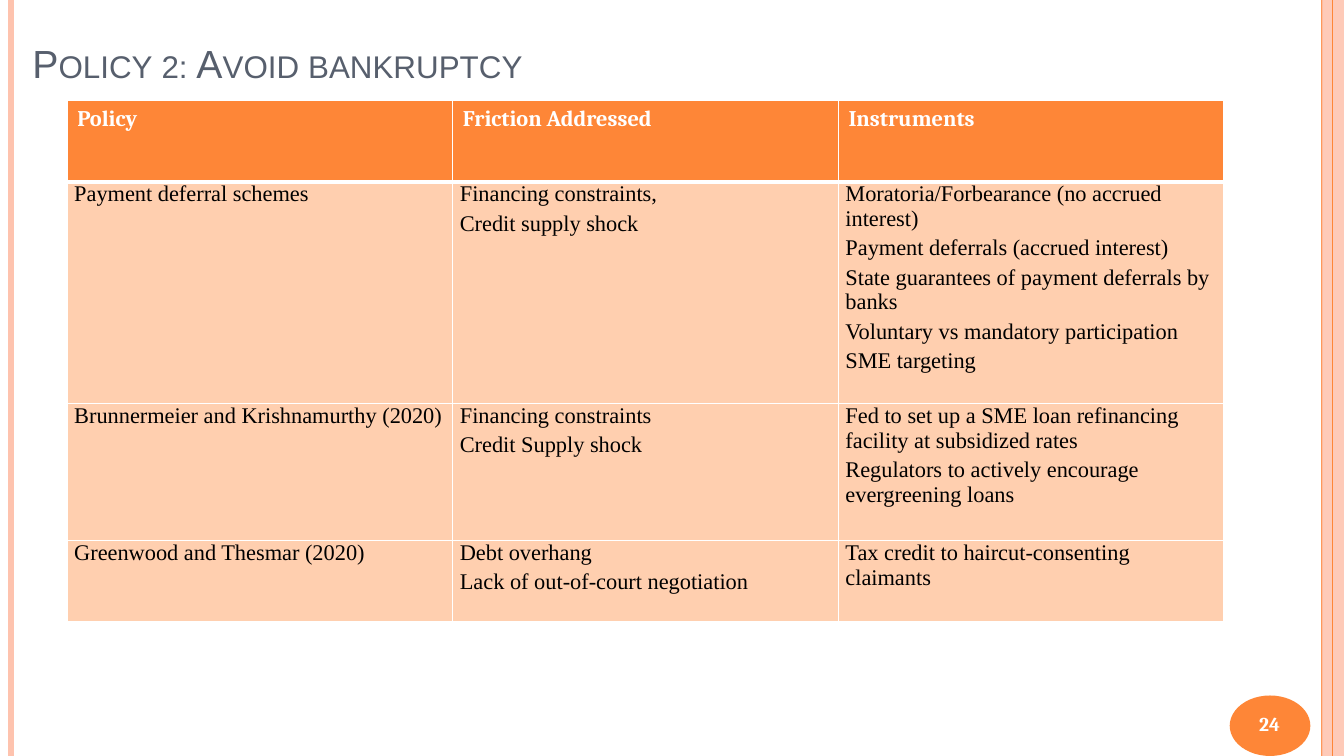
from dataclasses import dataclass
from lxml.etree import SubElement as Sub
from pptx import Presentation
from pptx.dml.color import RGBColor as Rgb
from pptx.enum.shapes import MSO_CONNECTOR as Conn, MSO_SHAPE as Kind
from pptx.enum.text import MSO_ANCHOR as Anchor, PP_ALIGN as Align
from pptx.oxml.ns import qn
from pptx.util import Inches, Pt


@dataclass(frozen=True)
class Theme:
    """Hold the colours, fonts and type sizes of the slide."""
    main: str = "FE8637"
    soft: str = "FEC3AE"
    pale: str = "FFCFAF"
    slate: str = "575F6D"
    white: str = "FFFFFF"
    black: str = "000000"
    sans: str = "Arial"
    head: str = "Cambria"
    body: str = "Times New Roman"
    big: int = 28
    mid: int = 16
    small: int = 14


LOOK = Theme()
COLS, ROWS = 120, 67.5
WIDE, HIGH = Inches(13.333), Inches(7.5)
TABLE = [
    [["Policy"], ["Friction Addressed"], ["Instruments"]],
    [["Payment deferral schemes"],
     ["Financing constraints,", "Credit supply shock"],
     ["Moratoria/Forbearance (no accrued interest)",
      "Payment deferrals (accrued interest)",
      "State guarantees of payment deferrals by banks",
      "Voluntary vs mandatory participation",
      "SME targeting"]],
    [["Brunnermeier and Krishnamurthy (2020)"],
     ["Financing constraints", "Credit Supply shock"],
     ["Fed to set up a SME loan refinancing facility at subsidized rates",
      "Regulators to actively encourage evergreening loans"]],
    [["Greenwood and Thesmar (2020)"],
     ["Debt overhang", "Lack of out-of-court negotiation"],
     ["Tax credit to haircut-consenting claimants"]],
]


def across(n):
    """Turn grid columns into a length."""
    return round(WIDE * n / COLS)


def down(n):
    """Turn grid rows into a length."""
    return round(HIGH * n / ROWS)


def area(x, y, w, h):
    """Turn a grid box into left, top, width and height."""
    return across(x), down(y), across(w), down(h)


def write(frame, lines, font, size, color, bold=False, align=Align.LEFT,
          after=0, caps=False):
    """Fill a text frame with one formatted paragraph per line."""
    for i, line in enumerate(lines):
        para = frame.paragraphs[0] if i == 0 else frame.add_paragraph()
        para.alignment, para.space_after = align, Pt(after)
        run = para.add_run()
        run.text = line
        run.font.name, run.font.size, run.font.bold = font, Pt(size), bold
        run.font.color.rgb = Rgb.from_string(color)
        if caps:
            run.font._element.set("cap", "small")


def rule(slide, x, color, width):
    """Draw a line from the top to the foot of the slide."""
    line = slide.shapes.add_connector(
        Conn.STRAIGHT, across(x), 0, across(x), HIGH)
    line.line.color.rgb, line.line.width = Rgb.from_string(color), Pt(width)
    Sub(line._element.spPr, qn("a:effectLst"))


def block(slide, kind, box, color, alpha=100):
    """Draw a filled shape without an outline."""
    shape = slide.shapes.add_shape(kind, *area(*box))
    shape.shadow.inherit = False
    shape.fill.solid()
    shape.fill.fore_color.rgb = Rgb.from_string(color)
    shape.line.fill.background()
    if alpha < 100:
        tint = shape._element.spPr.find(".//" + qn("a:srgbClr"))
        Sub(tint, qn("a:alpha"), val=str(alpha * 1000))


def edge(cell, top, foot):
    """Give a cell white borders with the given top and foot widths."""
    props = cell._tc.get_or_add_tcPr()
    sides = {"lnL": 1, "lnR": 1, "lnT": top, "lnB": foot}
    for i, (side, width) in enumerate(sides.items()):
        line = Sub(props, qn("a:" + side), w=str(Pt(width)))
        Sub(Sub(line, qn("a:solidFill")), qn("a:srgbClr"), val=LOOK.white)
        props.insert(i, line)


def fill_cell(cell, lines, row):
    """Style a header or body cell and write its lines."""
    cell.fill.solid()
    cell.fill.fore_color.rgb = Rgb.from_string(
        LOOK.pale if row else LOOK.main)
    if row:
        cell.margin_left = cell.margin_right = Inches(0.07)
        cell.margin_top = cell.margin_bottom = 0
        write(cell.text_frame, lines, LOOK.body, LOOK.mid, LOOK.black,
              after=3)
    else:
        write(cell.text_frame, lines, LOOK.head, LOOK.mid, LOOK.white,
              bold=True)
    edge(cell, 3 if row == 1 else 1, 1 if row else 3)


def grid(slide, data, box, highs):
    """Add the policy table with equal columns."""
    table = slide.shapes.add_table(
        len(data), len(data[0]), *area(*box)).table
    for row, high in zip(table.rows, highs):
        row.height = down(high)
    for i, cells in enumerate(data):
        for j, lines in enumerate(cells):
            fill_cell(table.cell(i, j), lines, i)


def title(slide, text, box):
    """Place and format the title placeholder."""
    head = slide.shapes.title
    head.left, head.top, head.width, head.height = area(*box)
    head.text_frame.vertical_anchor = Anchor.BOTTOM
    write(head.text_frame, [text], LOOK.sans, LOOK.big, LOOK.slate,
          caps=True)


def number(slide, text, box):
    """Write the page number in its badge."""
    frame = slide.shapes.add_textbox(*area(*box)).text_frame
    frame.word_wrap, frame.vertical_anchor = True, Anchor.MIDDLE
    write(frame, [text], LOOK.head, LOOK.small, LOOK.white, bold=True,
          align=Align.CENTER)


def main():
    """Build the slide and save it."""
    deck = Presentation()
    deck.slide_width, deck.slide_height = WIDE, HIGH
    slide = deck.slides.add_slide(deck.slide_layouts[5])
    rule(slide, 1, LOOK.soft, 4.5)
    rule(slide, 118, LOOK.main, 1.5)
    block(slide, Kind.RECTANGLE, (118, 0, 2, ROWS), LOOK.soft, alpha=87)
    rule(slide, 119, LOOK.main, 0.75)
    block(slide, Kind.OVAL, (109.8, 62.1, 7.2, 5.4), LOOK.main)
    title(slide, "Policy 2: Avoid bankruptcy", (2, 1.2, 114, 7))
    number(slide, "24", (109.35, 62, 8, 5.15))
    grid(slide, TABLE, (6, 9, 103.3, 46.5), (7.25, 19.75, 12.25, 7.25))
    deck.save("out.pptx")


if __name__ == "__main__":
    main()
